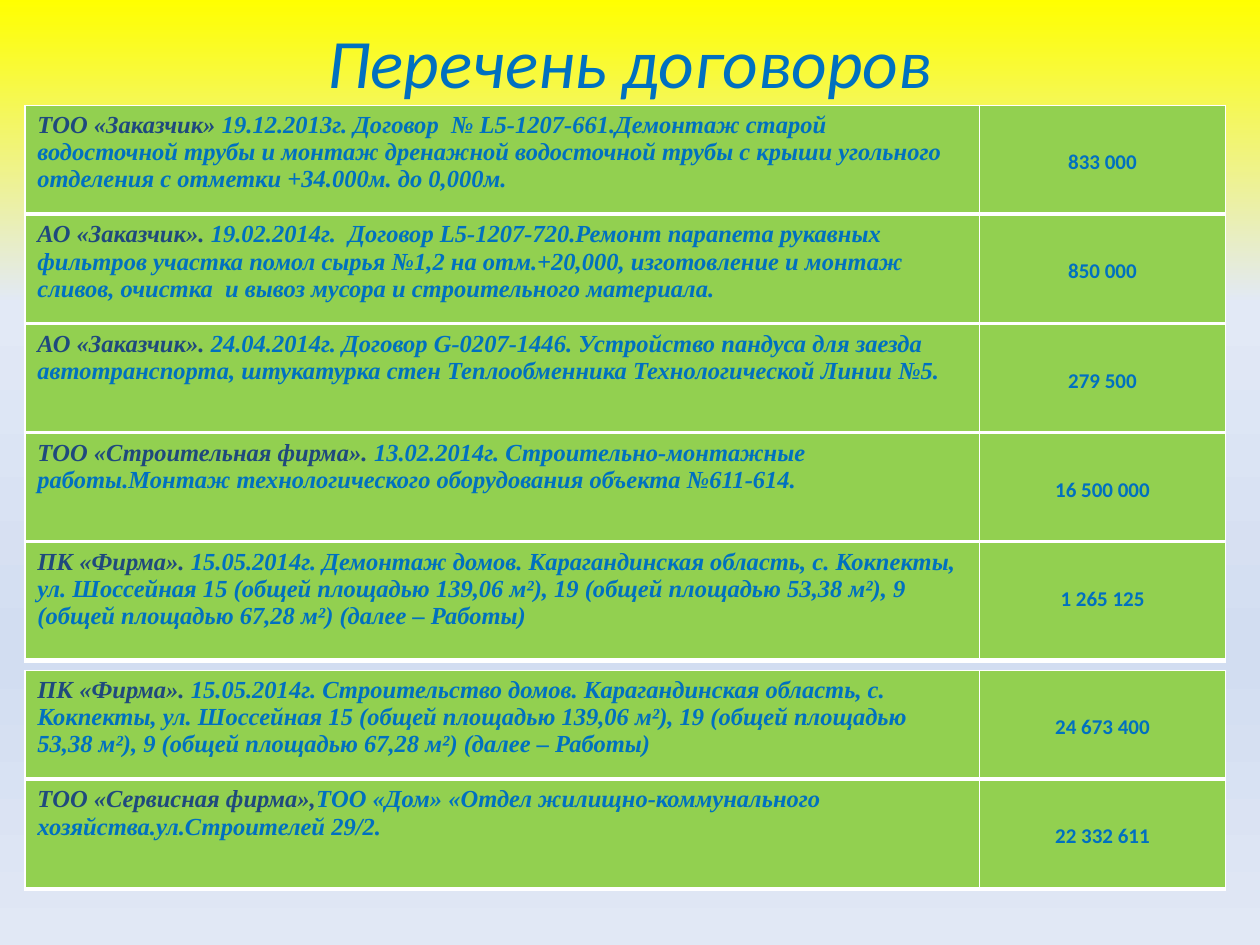
from lxml import etree
from pptx import Presentation
from pptx.dml.color import RGBColor
from pptx.enum.text import MSO_ANCHOR, MSO_AUTO_SIZE, PP_ALIGN
from pptx.oxml.ns import qn
from pptx.util import Cm, Pt

CENTER = PP_ALIGN.CENTER
MIDDLE = MSO_ANCHOR.MIDDLE
NO_FIT = MSO_AUTO_SIZE.NONE

COLORS = {
    "blue": "0070C0",
    "navy": "1F497D",
    "green": "92D050",
    "white": "FFFFFF",
}
BACKGROUND_STOPS = [(0, "FFFF00"), (32, "E2E9F6"), (69, "D2DDF1"), (100, "E1E8F5")]
BORDERS = {"lnL": 1, "lnR": 1, "lnT": 1, "lnB": 3}

TABLE_LEFT = 0.5
COLUMN_WIDTHS = (19.25, 4.95)
ROW_HEIGHT = 2.2

# top, height, customer, subject, amount
CONTRACTS = [
    (2.13, ROW_HEIGHT, "ТОО «Заказчик»",
     " 19.12.2013г. Договор  № L5-1207-661.Демонтаж старой водосточной трубы и монтаж "
     "дренажной водосточной трубы с крыши угольного отделения с отметки +34.000м. до 0,000м.",
     "833 000"),
    (4.33, ROW_HEIGHT, "АО «Заказчик». ",
     "19.02.2014г.  Договор L5-1207-720.Ремонт парапета рукавных фильтров участка помол "
     "сырья №1,2 на отм.+20,000, изготовление и монтаж сливов, очистка  и вывоз мусора "
     "и строительного материала.",
     "850 000"),
    (6.53, ROW_HEIGHT, "АО «Заказчик». ",
     "24.04.2014г. Договор G-0207-1446. Устройство пандуса для заезда автотранспорта, "
     "штукатурка стен Теплообменника Технологической Линии №5.",
     "279 500"),
    (8.73, ROW_HEIGHT, "ТОО «Строительная фирма». ",
     "13.02.2014г. Строительно-монтажные работы.Монтаж технологического оборудования "
     "объекта №611-614.",
     "16 500 000"),
    (10.93, 2.38, "ПК «Фирма». ",
     "15.05.2014г. Демонтаж домов. Карагандинская область, с. Кокпекты, ул. Шоссейная 15 "
     "(общей площадью 139,06 м²), 19 (общей площадью 53,38 м²), 9 "
     "(общей площадью 67,28 м²) (далее – Работы)",
     "1 265 125"),
    (13.52, ROW_HEIGHT, "ПК «Фирма». ",
     "15.05.2014г. Строительство домов. Карагандинская область, с. Кокпекты, "
     "ул. Шоссейная 15 (общей площадью 139,06 м²), 19 (общей площадью 53,38 м²), 9 "
     "(общей площадью 67,28 м²) (далее – Работы)",
     "24 673 400"),
    (15.72, ROW_HEIGHT, "ТОО «Сервисная фирма»,",
     "ТОО «Дом» «Отдел жилищно-коммунального хозяйства.ул.Строителей 29/2.",
     "22 332 611"),
]


def add_text(para, text, *, size, font="Calibri", color="blue", bold=False, italic=False):
    span = para.add_run()
    span.text = text
    span.font.size = Pt(size)
    span.font.name = font
    span.font.bold = bold
    span.font.italic = italic
    span.font.color.rgb = RGBColor.from_string(COLORS[color])


def add_color(parent, color):
    etree.SubElement(parent, qn("a:srgbClr"), val=color)


def paint_background(page):
    fill = page.background.fill
    fill.gradient()
    fill.gradient_angle = 270
    stops = page.background._cSld.find(".//" + qn("a:gsLst"))
    for stop in list(stops):
        stops.remove(stop)
    for percent, color in BACKGROUND_STOPS:
        add_color(etree.SubElement(stops, qn("a:gs"), pos=str(percent * 1000)), color)


def place_title(page, left, top, width, height):
    title = page.shapes.title
    title.left, title.top, title.width, title.height = map(Cm, (left, top, width, height))
    frame = title.text_frame
    frame.auto_size = NO_FIT
    frame.vertical_anchor = MIDDLE
    para = frame.paragraphs[0]
    para.alignment = CENTER
    add_text(para, "Перечень договоров", size=39.6, italic=True)


def style_cell(cell):
    """Give the cell its green fill and white borders."""
    cell.fill.solid()
    cell.fill.fore_color.rgb = RGBColor.from_string(COLORS["green"])
    properties = cell._tc.get_or_add_tcPr()
    for index, (side, points) in enumerate(BORDERS.items()):
        line = etree.Element(qn("a:" + side), w=str(Pt(points)))
        add_color(etree.SubElement(line, qn("a:solidFill")), COLORS["white"])
        properties.insert(index, line)


def add_contract(page, left, top, height, customer, subject, amount):
    box = page.shapes.add_table(1, len(COLUMN_WIDTHS), Cm(left), Cm(top),
                                Cm(sum(COLUMN_WIDTHS)), Cm(height))
    table = box.table
    table.first_row = False
    table.horz_banding = False
    table.rows[0].height = Cm(height)
    for column, width in zip(table.columns, COLUMN_WIDTHS):
        column.width = Cm(width)

    subject_cell, amount_cell = table.rows[0].cells
    style_cell(subject_cell)
    style_cell(amount_cell)

    para = subject_cell.text_frame.paragraphs[0]
    for text, color in ((customer, "navy"), (subject, "blue")):
        add_text(para, text, size=14, font="Times New Roman", color=color,
                 bold=True, italic=True)

    amount_cell.margin_top = Cm(0.89)
    para = amount_cell.text_frame.paragraphs[0]
    para.alignment = CENTER
    add_text(para, amount, size=12, bold=True)


def main():
    deck = Presentation()
    deck.slide_width, deck.slide_height = Cm(25.4), Cm(19.05)
    page = deck.slides.add_slide(deck.slide_layouts[5])
    paint_background(page)
    place_title(page, 1.27, 0.53, 22.86, 1.4)
    for contract in CONTRACTS:
        add_contract(page, TABLE_LEFT, *contract)
    deck.save("out.pptx")


if __name__ == "__main__":
    main()
